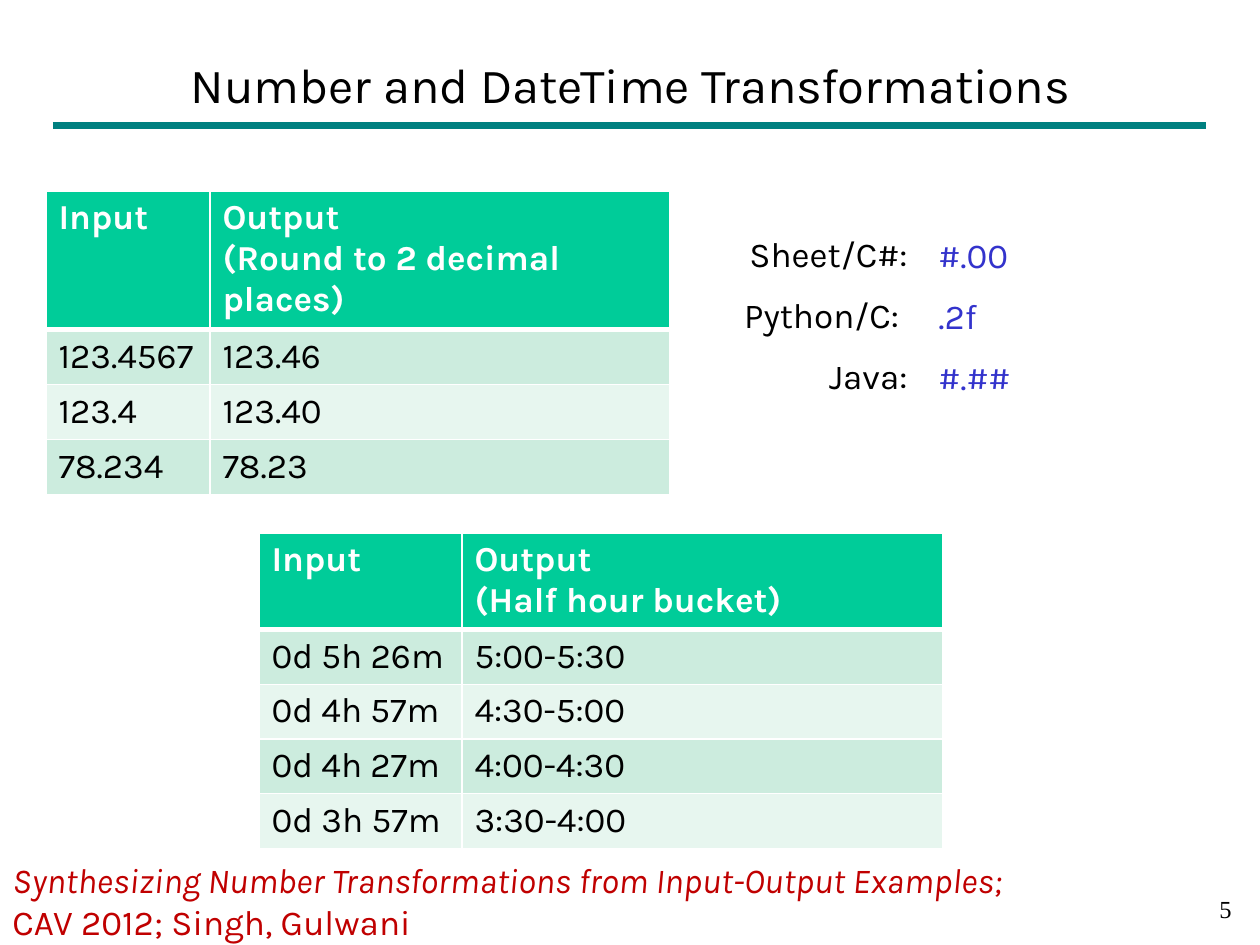
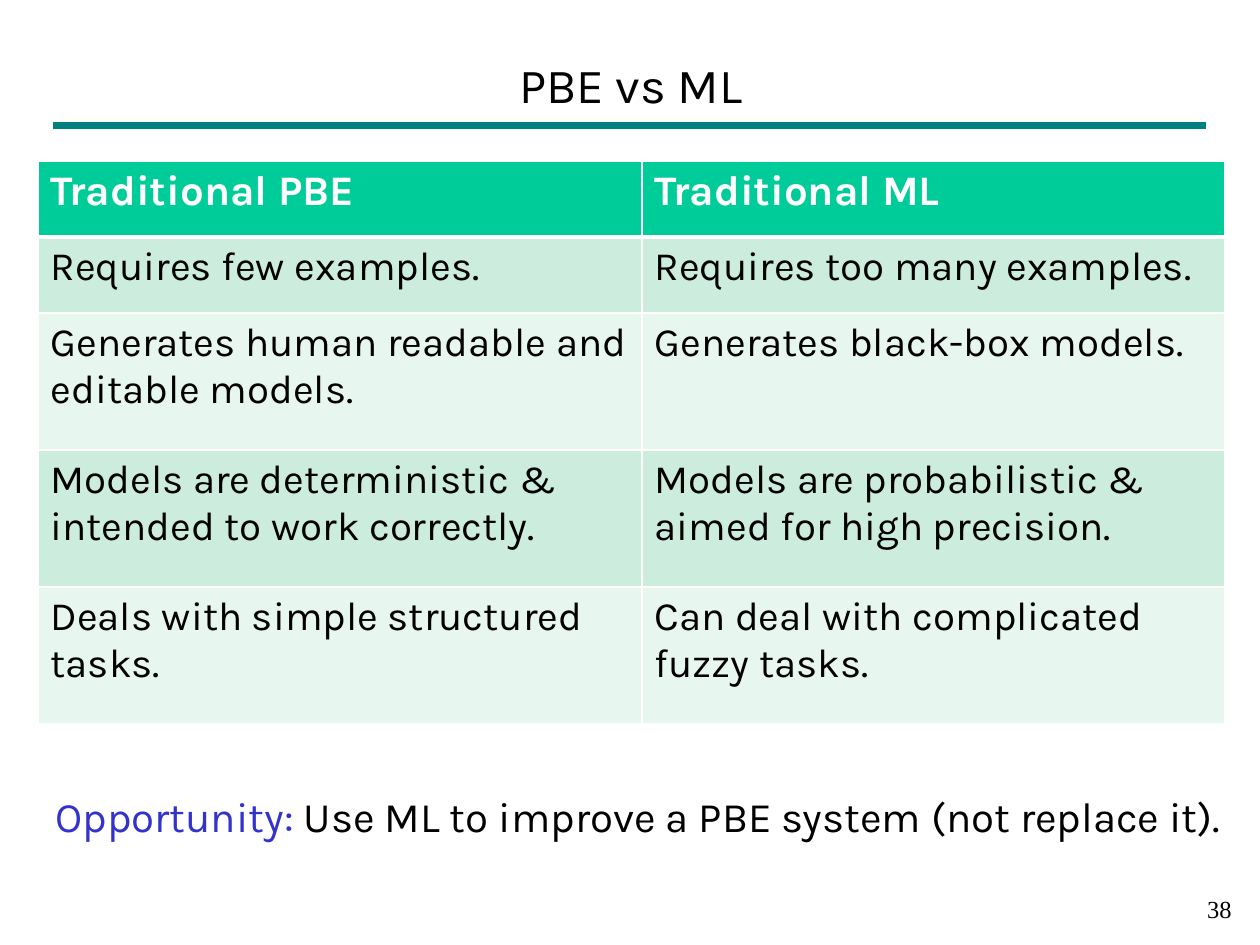
"""Build two slides on number and date transformations and on PBE versus ML."""
import lxml.etree
import pptx
import pptx.dml.color
import pptx.enum.shapes
import pptx.enum.text
import pptx.oxml.ns
import pptx.util

PX = 914400 // 126
FONT = "Karla"
BLACK, WHITE, BLUE, RED = "000000", "FFFFFF", "3333CC", "C00000"
TEAL, HEADER = "008080", "00CC99"
BANDS = ["E7F6EF", "CCECDE"]
LEFT = pptx.enum.text.PP_ALIGN.LEFT
CENTER = pptx.enum.text.PP_ALIGN.CENTER
RIGHT = pptx.enum.text.PP_ALIGN.RIGHT


def color(value):
    return pptx.dml.color.RGBColor.from_string(value)


def add_text(page, place, lines, size, ink=BLACK, align=LEFT, gap=0, font=FONT):
    box = page.shapes.add_textbox(*(length * PX for length in place))
    frame = box.text_frame
    frame.word_wrap = True
    frame.text = "\n".join(lines)
    for para in frame.paragraphs:
        para.alignment = align
        para.font.name = font
        para.font.size = pptx.util.Pt(size)
        para.font.color.rgb = color(ink)
    for para in frame.paragraphs[1:]:
        para.space_before = pptx.util.Pt(gap)
    return frame


deck = pptx.Presentation()
deck.slide_width = 1260 * PX
deck.slide_height = 945 * PX

pages = []
for title, number in [("Number and DateTime Transformations", "5"), ("PBE vs ML", "38")]:
    page = deck.slides.add_slide(deck.slide_layouts[6])
    pages.append(page)
    rule = page.shapes.add_connector(
        pptx.enum.shapes.MSO_CONNECTOR.STRAIGHT, 53 * PX, 126 * PX, 1206 * PX, 126 * PX)
    rule.line.color.rgb = color(TEAL)
    rule.line.width = pptx.util.Pt(4)
    lxml.etree.SubElement(rule._element.spPr, pptx.oxml.ns.qn("a:effectLst"))
    frame = add_text(page, (95, 42, 1071, 84), [title], 28, align=CENTER)
    frame.vertical_anchor = pptx.enum.text.MSO_ANCHOR.MIDDLE
    add_text(page, (982, 888, 262, 53), [number], 14, align=RIGHT, font="Times New Roman")
transforms, comparison = pages

tables = [
    (transforms, 46, 191, [164, 460], [138, 55, 55, 55], 20, 20, [
        ("Input", "Output\n(Round to 2 decimal places)"),
        ("123.4567", "123.46"),
        ("123.4", "123.40"),
        ("78.234", "78.23"),
    ]),
    (transforms, 259, 533, [203, 481], [93, 54, 54, 54, 54], 20, 20, [
        ("Input", "Output\n(Half hour bucket)"),
        ("0d 5h 26m", "5:00-5:30"),
        ("0d 4h 57m", "4:30-5:00"),
        ("0d 4h 27m", "4:00-4:30"),
        ("0d 3h 57m", "3:30-4:00"),
    ]),
    (comparison, 38, 161, [604, 583], [76, 76, 137, 137, 137], 24, 23, [
        ("Traditional PBE", "Traditional ML"),
        ("Requires few examples.", "Requires too many examples."),
        ("Generates human readable and editable models.", "Generates black-box models."),
        ("Models are deterministic & intended to work correctly.",
         "Models are probabilistic & aimed for high precision."),
        ("Deals with simple structured tasks.", "Can deal with complicated fuzzy tasks."),
    ]),
]
for page, left, top, widths, heights, header_size, body_size, rows in tables:
    table = page.shapes.add_table(
        len(rows), len(widths), left * PX, top * PX, sum(widths) * PX, sum(heights) * PX).table
    for column, width in zip(table.columns, widths):
        column.width = width * PX
    for row, height in zip(table.rows, heights):
        row.height = height * PX
    for row_index, texts in enumerate(rows):
        is_header = row_index == 0
        for column_index, text in enumerate(texts):
            cell = table.cell(row_index, column_index)
            cell.text = text
            cell.fill.solid()
            cell.fill.fore_color.rgb = color(HEADER if is_header else BANDS[row_index % 2])
            for para in cell.text_frame.paragraphs:
                para.font.name = FONT
                para.font.size = pptx.util.Pt(header_size if is_header else body_size)
                para.font.bold = is_header
                para.font.color.rgb = color(WHITE if is_header else BLACK)
            thick_side = {0: "B", 1: "T"}.get(row_index)
            for position, side in enumerate("LRTB"):
                width = pptx.util.Pt(3 if side == thick_side else 1)
                border = pptx.oxml.parse_xml(
                    f'<a:ln{side} {pptx.oxml.ns.nsdecls("a")} w="{width}"><a:solidFill>'
                    f'<a:srgbClr val="{WHITE}"/></a:solidFill></a:ln{side}>')
                cell._tc.get_or_add_tcPr().insert(position, border)

add_text(transforms, (721, 226, 199, 174), ["Sheet/C#:", "Python/C: ", "Java:"], 20,
         align=RIGHT, gap=11)
add_text(transforms, (926, 227, 145, 174), ["#.00", ".2f", "#.##"], 20, BLUE, gap=11)
citation = add_text(transforms, (0, 852, 1166, 97), [
    "Synthesizing Number Transformations from Input-Output Examples;",
    "CAV 2012; Singh, Gulwani",
], 20, RED)
citation.paragraphs[0].font.italic = True

opportunity = add_text(comparison, (43, 784, 1191, 63), ["Opportunity: "], 24)
para = opportunity.paragraphs[0]
para.runs[0].font.color.rgb = color(BLUE)
span = para.add_run()
span.text = "Use ML to improve a PBE system (not replace it)."

deck.save("out.pptx")
